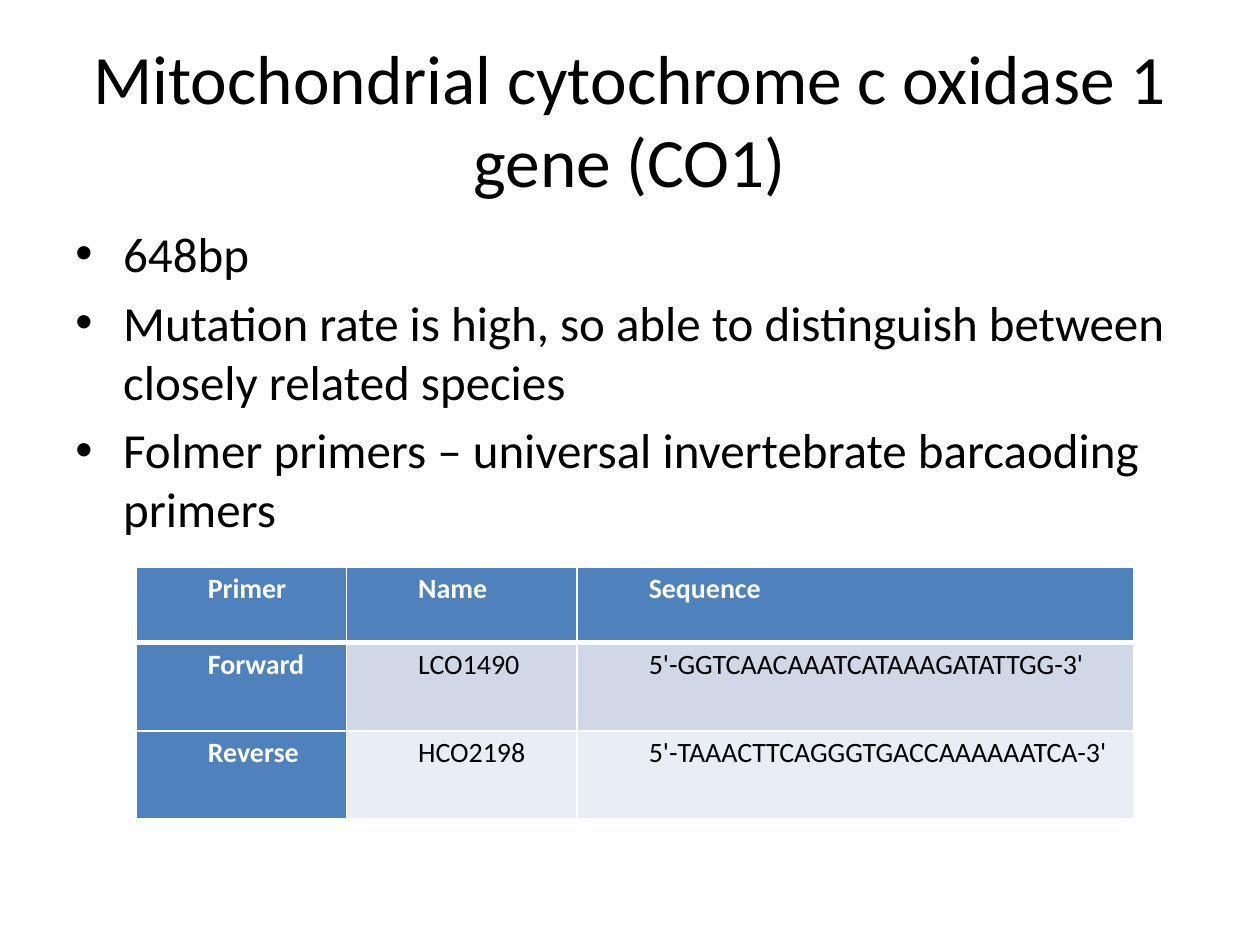
from pptx import Presentation
from pptx.dml.color import RGBColor
from pptx.enum.text import MSO_ANCHOR, PP_ALIGN
from pptx.oxml.ns import qn
from pptx.util import Inches, Pt
from lxml.etree import SubElement

WIDE, HIGH = 10, 7.5
HUES = {"ink": "000000", "paper": "FFFFFF", "head": "4F81BD", "odd": "D0D8E8", "even": "E9EDF4"}
TITLE = "Mitochondrial cytochrome c oxidase 1 gene (CO1)"
POINTS = [
    "648bp",
    "Mutation rate is high, so able to distinguish between closely related species",
    "Folmer primers – universal invertebrate barcaoding primers",
]
ROWS = [
    ["Primer", "Name", "Sequence"],
    ["Forward", "LCO1490", "5'-GGTCAACAAATCATAAAGATATTGG-3'"],
    ["Reverse", "HCO2198", "5'-TAAACTTCAGGGTGACCAAAAAATCA-3'"],
]
COLS = [1.67, 1.83, 4.42]
TALL = [0.6, 0.7, 0.7]


def apply(item, form):
    for key, value in form.items():
        setattr(item, key, value)


def tint(name):
    return RGBColor.from_string(HUES[name])


def write(para, text, size, hue="ink", bold=False, **form):
    run = para.add_run()
    run.text = text
    apply(run.font, {"name": "Calibri", "size": Pt(size), "bold": bold})
    run.font.color.rgb = tint(hue)
    apply(para, form)


def indent(para, left, first=0):
    props = para._p.get_or_add_pPr()
    props.set("marL", str(Inches(left)))
    props.set("indent", str(Inches(first)))
    return props


def add_box(slide, left, top, width, height, anchor):
    box = slide.shapes.add_textbox(
        Inches(left * WIDE), Inches(top * HIGH), Inches(width * WIDE), Inches(height * HIGH))
    apply(box.text_frame, {"word_wrap": True, "vertical_anchor": anchor})
    return box.text_frame


def add_list(frame, items):
    for i, text in enumerate(items):
        para = frame.add_paragraph() if i else frame.paragraphs[0]
        write(para, text, 28, space_before=Pt(5.6))
        props = indent(para, 0.38, -0.38)
        SubElement(props, qn("a:buFont"), typeface="Arial")
        SubElement(props, qn("a:buChar"), char="•")


def add_edge(cell, side, width):
    props = cell._tc.get_or_add_tcPr()
    line = SubElement(props, qn("a:" + side), w=str(Pt(width)))
    fill = SubElement(line, qn("a:solidFill"))
    SubElement(fill, qn("a:srgbClr"), val=HUES["paper"])


def fill_cell(cell, text, row, col):
    head = row == 0 or col == 0
    for side in ("lnL", "lnR", "lnT", "lnB"):
        thick = (row, side) in ((0, "lnB"), (1, "lnT"))
        add_edge(cell, side, 3 if thick else 1)
    cell.fill.solid()
    cell.fill.fore_color.rgb = tint("head" if head else "odd" if row % 2 else "even")
    apply(cell, {"margin_left": Inches(0.07), "margin_right": Inches(0.07),
                 "margin_top": 0, "margin_bottom": 0})
    para = cell.text_frame.paragraphs[0]
    write(para, text, 16, "paper" if head else "ink", head, line_spacing=1.15)
    indent(para, 0.5)


def add_grid(slide, left, top):
    grid = slide.shapes.add_table(
        len(TALL), len(COLS), Inches(left), Inches(top),
        Inches(sum(COLS)), Inches(sum(TALL))).table
    for col, width in zip(grid.columns, COLS):
        col.width = Inches(width)
    for r, texts in enumerate(ROWS):
        grid.rows[r].height = Inches(TALL[r])
        for c, text in enumerate(texts):
            fill_cell(grid.cell(r, c), text, r, c)


def main():
    deck = Presentation()
    apply(deck, {"slide_width": Inches(WIDE), "slide_height": Inches(HIGH)})
    slide = deck.slides.add_slide(deck.slide_layouts[6])
    title = add_box(slide, 0.05, 0.04, 0.9, 0.17, MSO_ANCHOR.MIDDLE)
    write(title.paragraphs[0], TITLE, 39.6, alignment=PP_ALIGN.CENTER)
    add_list(add_box(slide, 0.05, 0.23, 0.89, 0.69, MSO_ANCHOR.TOP), POINTS)
    add_grid(slide, 1.08, 4.5)
    deck.save("out.pptx")


if __name__ == "__main__":
    main()
